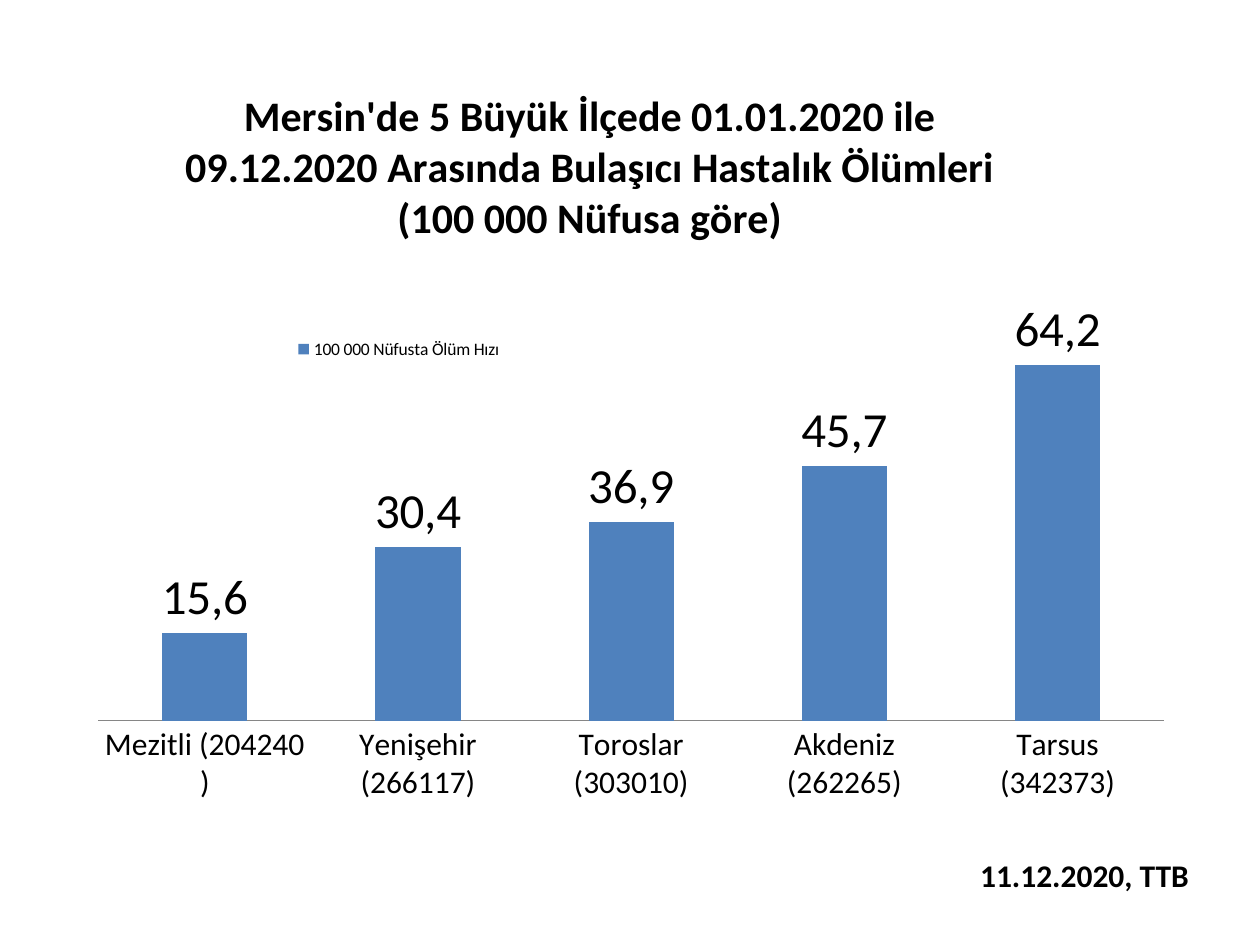
from dataclasses import dataclass
from lxml.etree import SubElement
from pptx import Presentation
from pptx.chart.data import CategoryChartData
from pptx.dml.color import RGBColor
from pptx.enum.chart import (XL_CHART_TYPE, XL_LABEL_POSITION,
                             XL_LEGEND_POSITION, XL_TICK_MARK)
from pptx.enum.text import MSO_AUTO_SIZE, MSO_ANCHOR
from pptx.oxml.ns import qn
from pptx.util import Inches, Pt


@dataclass(frozen=True)
class Theme:
    face: str = "Calibri"
    ink: RGBColor = RGBColor(0, 0, 0)
    bar: RGBColor = RGBColor(0x4F, 0x81, 0xBD)
    axis: RGBColor = RGBColor(0x86, 0x86, 0x86)
    small: int = 10
    body: int = 18
    title: int = 24
    value: int = 28


THEME = Theme()
WIDTH, HEIGHT = Inches(10), Inches(7.5)

TITLE = ("Mersin'de 5 Büyük İlçede 01.01.2020 ile 09.12.2020 Arasında "
         "Bulaşıcı Hastalık Ölümleri (100 000 Nüfusa göre)")
SERIES = "100 000 Nüfusta Ölüm Hızı"
# District with population, bar height, printed rate
DISTRICTS = [
    ("Mezitli (204240 )", 17.6, "15,6"),
    ("Yenişehir (266117)", 34.9, "30,4"),
    ("Toroslar (303010)", 39.9, "36,9"),
    ("Akdeniz (262265)", 51.1, "45,7"),
    ("Tarsus (342373)", 71.3, "64,2"),
]


def style_font(font, size, bold=False):
    font.name = THEME.face
    font.size = Pt(size)
    font.bold = bold
    font.color.rgb = THEME.ink


def add_span(para, text, size, bold=False):
    span = para.add_run()
    span.text = text
    style_font(span.font, size, bold)


def place_part(part, index, inner=False, **shares):
    """Place a chart part by shares (x, y, w, h) of the chart's size."""
    for old in part.findall(qn("c:layout")):
        part.remove(old)
    layout = SubElement(part, qn("c:layout"))
    part.insert(index, layout)
    manual = SubElement(layout, qn("c:manualLayout"))
    settings = [("layoutTarget", "inner")] if inner else []
    settings += [("xMode", "edge"), ("yMode", "edge"), *shares.items()]
    for name, value in settings:
        SubElement(manual, qn(f"c:{name}")).set("val", str(value))


def style_axes(chart):
    districts = chart.category_axis
    districts.major_tick_mark = XL_TICK_MARK.NONE
    districts.format.line.color.rgb = THEME.axis
    districts.format.line.width = Pt(0.75)
    style_font(districts.tick_labels.font, THEME.body)
    rates = chart.value_axis
    rates.minimum_scale, rates.maximum_scale = 0, 80
    rates.has_major_gridlines = False
    rates.visible = False


def style_bars(plot):
    plot.gap_width = 150
    plot.vary_by_categories = False
    bars = plot.series[0]
    bars.format.fill.solid()
    bars.format.fill.fore_color.rgb = THEME.bar
    labels = bars.data_labels
    labels.show_value = True
    labels.position = XL_LABEL_POSITION.OUTSIDE_END
    style_font(labels.font, THEME.value)
    for index, (_, _, rate) in enumerate(DISTRICTS):
        label = bars.points[index].data_label
        add_span(label.text_frame.paragraphs[0], rate, THEME.value)
        label.position = XL_LABEL_POSITION.OUTSIDE_END


def add_rate_chart(page):
    data = CategoryChartData(number_format="General")
    data.categories = [name for name, _, _ in DISTRICTS]
    data.add_series(SERIES, [height for _, height, _ in DISTRICTS])
    chart = page.shapes.add_chart(
        XL_CHART_TYPE.COLUMN_CLUSTERED, int(WIDTH * 0.051), int(HEIGHT * 0.059),
        int(WIDTH * 0.9), int(HEIGHT * 0.828), data).chart
    style_font(chart.font, THEME.small)

    # Title
    chart.has_title = True
    title = chart.chart_title
    add_span(title.text_frame.paragraphs[0], TITLE, THEME.title, bold=True)
    place_part(title._element, 1, x=0.1, y=0.03)

    # Legend
    chart.has_legend = True
    legend = chart.legend
    legend.position = XL_LEGEND_POSITION.TOP
    legend.include_in_layout = False
    style_font(legend.font, THEME.small)
    place_part(legend._element, 1, x=0.2, y=0.36, w=0.19, h=0.03)

    # Plot
    style_axes(chart)
    style_bars(chart.plots[0])
    plot_area = chart._chartSpace.chart.plotArea
    place_part(plot_area, 0, inner=True, x=0.03, y=0.34, w=0.94, h=0.51)


def add_source_note(page, text):
    box = page.shapes.add_textbox(int(WIDTH * 0.768), int(HEIGHT * 0.899),
                                  int(WIDTH * 0.188), int(HEIGHT * 0.053))
    frame = box.text_frame
    frame.word_wrap = False
    frame.auto_size = MSO_AUTO_SIZE.SHAPE_TO_FIT_TEXT
    frame.vertical_anchor = MSO_ANCHOR.TOP
    add_span(frame.paragraphs[0], text, THEME.body, bold=True)


def main():
    deck = Presentation()
    deck.slide_width, deck.slide_height = WIDTH, HEIGHT
    page = deck.slides.add_slide(deck.slide_layouts[6])
    add_rate_chart(page)
    add_source_note(page, "11.12.2020, TTB")
    deck.save("out.pptx")


if __name__ == "__main__":
    main()
